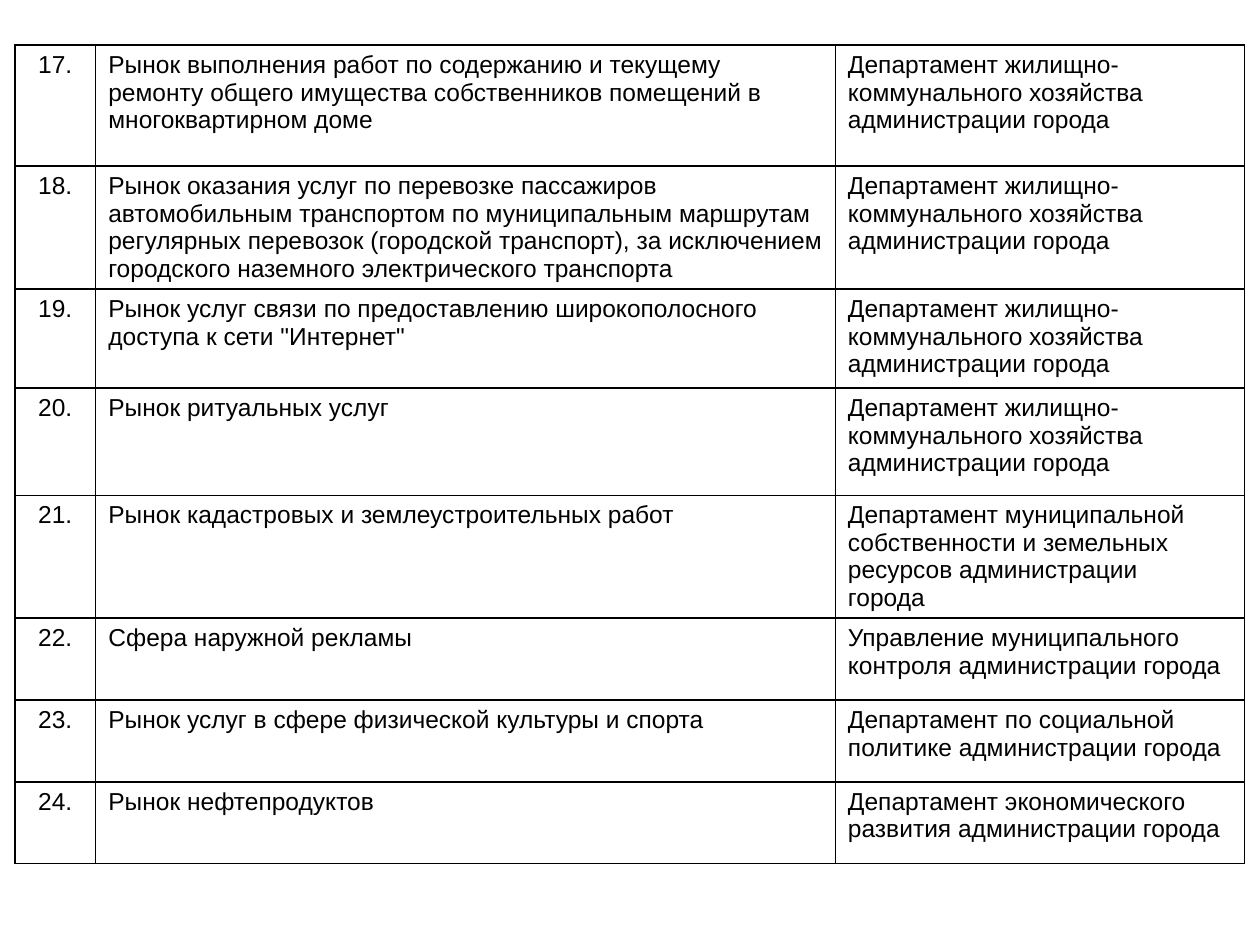
import pptx
import pptx.dml.color
import pptx.enum.text
import pptx.oxml
import pptx.oxml.ns
import pptx.util
from pptx.util import Cm

INK, PAPER = "000000", "FFFFFF"
COLS = (1.63, 14.91, 8.25)
HOUSING = "Департамент жилищно-коммунального хозяйства администрации города"
FIRST = 17
ROWS = [
    (2.44, "Рынок выполнения работ по содержанию и текущему ремонту общего "
     "имущества собственников помещений в многоквартирном доме", HOUSING),
    (2.44, "Рынок оказания услуг по перевозке пассажиров автомобильным "
     "транспортом по муниципальным маршрутам регулярных перевозок "
     "(городской транспорт), за исключением городского наземного "
     "электрического транспорта", HOUSING),
    (2, "Рынок услуг связи по предоставлению широкополосного доступа "
     "к сети \"Интернет\"", HOUSING),
    (2.16, "Рынок ритуальных услуг", HOUSING),
    (2, "Рынок кадастровых и землеустроительных работ",
     "Департамент муниципальной собственности и земельных ресурсов "
     "администрации\nгорода"),
    (1.65, "Сфера наружной рекламы",
     "Управление муниципального контроля администрации города"),
    (1.65, "Рынок услуг в сфере физической культуры и спорта",
     "Департамент по социальной политике администрации города"),
    (1.65, "Рынок нефтепродуктов",
     "Департамент экономического развития администрации города"),
]


def paint(fmt, color):
    """Give a fill a solid colour from a hex string."""
    fmt.solid()
    fmt.fore_color.rgb = pptx.dml.color.RGBColor.from_string(color)


def frame(cell, color, width):
    """Draw a line of the given point width on all four sides of a cell."""
    props = cell._tc.get_or_add_tcPr()
    for spot, side in enumerate("LRTB"):
        line = pptx.oxml.parse_xml(
            f'<a:ln{side} {pptx.oxml.ns.nsdecls("a")} w="{pptx.util.Pt(width)}">'
            f'<a:solidFill><a:srgbClr val="{color}"/></a:solidFill></a:ln{side}>')
        props.insert(spot, line)


def write(cell, text, align):
    """Fill a cell with text, one run for each line."""
    para = cell.text_frame.paragraphs[0]
    para.alignment = align
    for count, part in enumerate(text.split("\n")):
        if count:
            para.add_line_break()
        run = para.add_run()
        run.text = part
        run.font.name = "Arial"
        run.font.size = pptx.util.Pt(14)
        paint(run.font.fill, INK)


def markets(slide, left, top, cols, rows):
    """Place the numbered table of markets and the bodies in charge."""
    high = sum(row[0] for row in rows)
    table = slide.shapes.add_table(len(rows), len(cols), Cm(left), Cm(top),
                                   Cm(sum(cols)), Cm(high)).table
    table.first_row = table.horz_banding = False
    for col, width in zip(table.columns, cols):
        col.width = Cm(width)
    kinds = pptx.enum.text.PP_ALIGN
    aligns = (kinds.CENTER, kinds.LEFT, kinds.LEFT)
    for index, (height, market, body) in enumerate(rows):
        table.rows[index].height = Cm(height)
        texts = (f"{FIRST + index}.", market, body)
        for cell, text, align in zip(table.rows[index].cells, texts, aligns):
            write(cell, text, align)
            paint(cell.fill, PAPER)
            frame(cell, INK, 1)


def main():
    """Build the deck and save it."""
    deck = pptx.Presentation()
    deck.slide_width, deck.slide_height = Cm(25.4), Cm(19.05)
    slide = deck.slides.add_slide(deck.slide_layouts[6])
    paint(slide.background.fill, PAPER)
    markets(slide, 0.3, 0.91, COLS, ROWS)
    deck.save("out.pptx")


if __name__ == "__main__":
    main()
